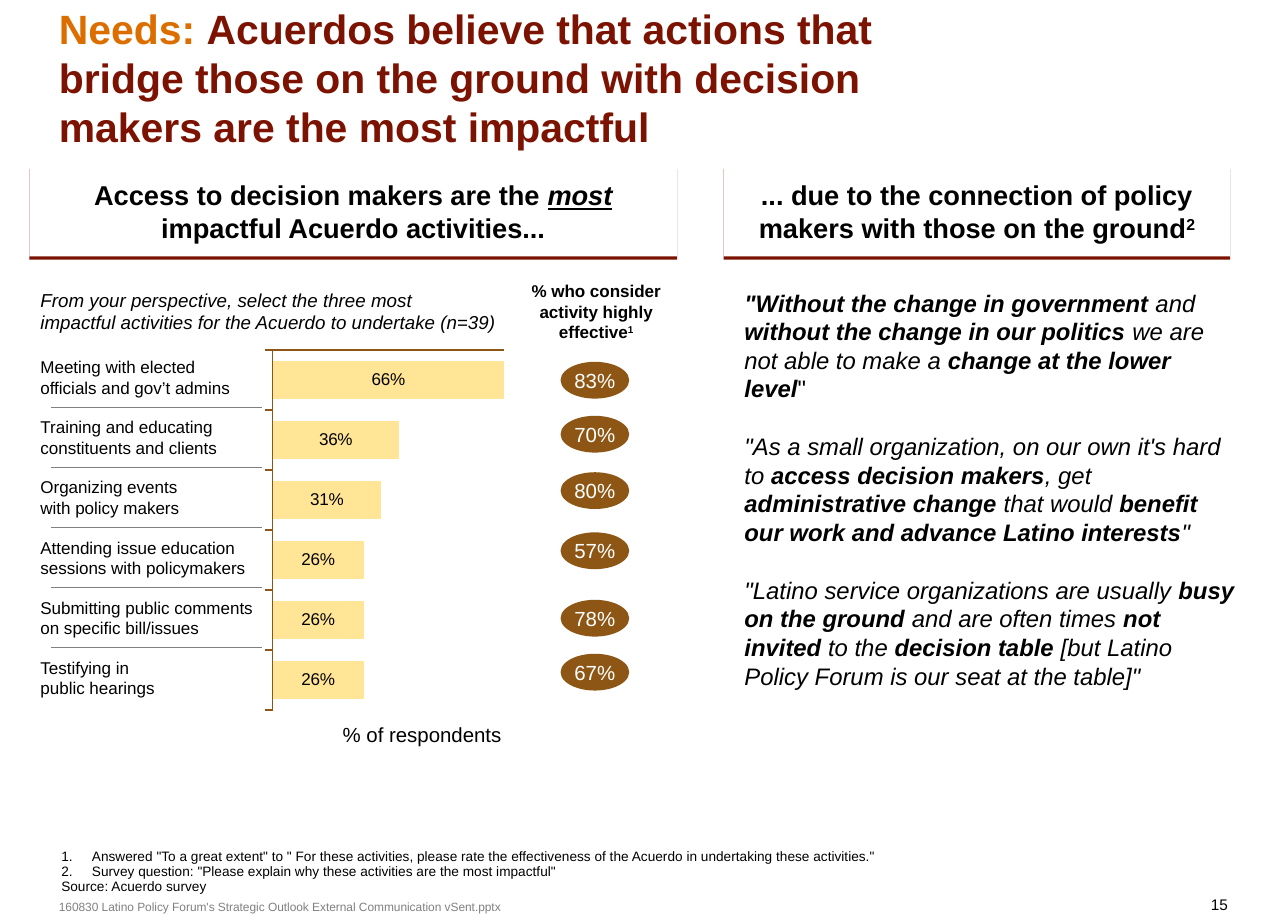
import pptx
import pptx.chart.data
import pptx.dml.color
import pptx.enum.chart
import pptx.enum.shapes
import pptx.enum.text
import pptx.oxml
import pptx.oxml.ns
import pptx.util
from dataclasses import dataclass
from lxml import etree

Inches = pptx.util.Inches
Align = pptx.enum.text.PP_ALIGN
Anchor = pptx.enum.text.MSO_ANCHOR
Shape = pptx.enum.shapes.MSO_SHAPE


@dataclass(frozen=True)
class Theme:
    font: str = "Arial"
    text: str = "000000"
    white: str = "FFFFFF"
    accent: str = "DC6E00"
    dark: str = "7C1302"
    brown: str = "8D5614"
    bar: str = "FFE595"
    grey: str = "808080"
    title: float = 24
    heading: float = 16
    quote: float = 14
    body: float = 12
    question: float = 11
    label: float = 10
    number: float = 9
    note: float = 8
    footer: float = 7


THEME = Theme()

TITLE = [
    ("Needs: ", "accent"),
    ("Acuerdos believe that actions that bridge those on the ground "
     "with decision makers are the most impactful", ""),
]
HEADINGS = [
    (0.24, 5.28, [("Access to decision makers are the ", ""), ("most", "italic underline"),
                  (" impactful Acuerdo activities...", "")]),
    (5.9, 4.13, [("... due to the connection of policy makers with those on the ground", ""),
                 ("2", "super")]),
]
QUESTION = [
    [("From your perspective, select the three most", "")],
    [("impactful activities for the Acuerdo to undertake (n=39)", "")],
]
EFFECTIVE = [("% who consider activity highly effective", ""), ("1", "super")]
ACTIVITIES = [
    ("Meeting with elected\vofficials and gov’t admins", 66, "83%", 2.95),
    ("Training and educating\vconstituents and clients", 36, "70%", 3.39),
    ("Organizing events\vwith policy makers", 31, "80%", 3.85),
    ("Attending issue education\vsessions with policymakers", 26, "57%", 4.34),
    ("Submitting public comments\von specific bill/issues", 26, "78%", 4.89),
    ("Testifying in\vpublic hearings", 26, "67%", 5.33),
]
QUOTES = [
    [('"Without the change in government', "bold"), (" and ", ""),
     ("without the change in our politics", "bold"), (" we are not able to make a ", ""),
     ("change at the lower level", "bold"), ('"', "upright")],
    [('"As a small organization, on our own it\'s hard to ', ""),
     ("access decision makers", "bold"), (", get ", ""),
     ("administrative change ", "bold"), ("that would", ""),
     (" benefit our work and advance Latino interests", "bold"), ('"', "")],
    [('"Latino service organizations are usually ', ""), ("busy on the ground", "bold"),
     (" and are often times ", ""), ("not invited", "bold"), (" to the ", ""),
     ("decision table", "bold"),
     (' [but Latino Policy Forum is our seat at the table]"', "")],
]
NOTES = [
    [('Answered "To a great extent" to " For these activities, please rate the '
      'effectiveness of the Acuerdo in undertaking these activities."', "")],
    [('Survey question: "Please explain why these activities are the most impactful"', "")],
    [("Source: Acuerdo survey", "")],
]
FOOTER = "160830 Latino Policy Forum's Strategic Outlook External Communication vSent.pptx"
PAGE_NUMBER = "15"
AXIS_TITLE = "% of respondents"
ROW_TOP, ROW_STEP, RULE_TOP = 2.91, 0.49, 3.32


def rgb(value):
    return pptx.dml.color.RGBColor.from_string(value)


def style_font(font, size, color=THEME.text, bold=False, italic=False):
    font.name, font.size = THEME.font, pptx.util.Pt(size)
    font.bold, font.italic = bold, italic
    font.color.rgb = rgb(color)


def write(box, paragraphs, size, align=Align.LEFT, anchor=Anchor.TOP, margins=(0, 0),
          gap=0, numbered=0, spacing=None, **look):
    frame = box.text_frame
    frame.word_wrap = True
    frame.auto_size = pptx.enum.text.MSO_AUTO_SIZE.NONE
    frame.vertical_anchor = anchor
    frame.margin_left = frame.margin_right = Inches(margins[0])
    frame.margin_top = frame.margin_bottom = Inches(margins[1])
    for index, spans in enumerate(paragraphs):
        para = frame.add_paragraph() if index else frame.paragraphs[0]
        para.alignment = align
        para.space_before = pptx.util.Pt(gap if index else 0)
        para.line_spacing = spacing
        if index < numbered:
            properties = para._p.get_or_add_pPr()
            properties.set("marL", str(Inches(0.25)))
            properties.set("indent", str(-Inches(0.25)))
            bullet = etree.SubElement(properties, pptx.oxml.ns.qn("a:buAutoNum"))
            bullet.set("type", "arabicPeriod")
        style_font(para.font, size, **look)
        for text, marks in spans:
            if "\v" in text:
                para.text = text
                continue
            span = para.add_run()
            span.text = text
            if "bold" in marks:
                span.font.bold = True
            if "italic" in marks:
                span.font.italic = True
            if "upright" in marks:
                span.font.italic = False
            if "underline" in marks:
                span.font.underline = True
            if "accent" in marks:
                span.font.color.rgb = rgb(THEME.accent)
            if "super" in marks:
                span.font._element.set("baseline", "30000")


def add_text(page, place, paragraphs, size, **options):
    box = page.shapes.add_textbox(*map(Inches, place))
    write(box, paragraphs, size, **options)


def add_filled(page, kind, place, color):
    box = page.shapes.add_shape(kind, *map(Inches, place))
    box.shadow.inherit = False
    box.fill.solid()
    box.fill.fore_color.rgb = rgb(color)
    box.line.fill.background()
    return box


def add_heading(page, left, width, spans):
    box = add_filled(page, Shape.RECTANGLE, (left, 1.35, width, 0.74), THEME.white)
    effects = box._element.spPr.find(pptx.oxml.ns.qn("a:effectLst"))
    shadow = etree.SubElement(effects, pptx.oxml.ns.qn("a:outerShdw"),
                              dist=str(pptx.util.Pt(2)), dir="5400000",
                              algn="t", rotWithShape="0")
    etree.SubElement(shadow, pptx.oxml.ns.qn("a:srgbClr"), val=THEME.dark)
    write(box, [spans], THEME.heading, align=Align.CENTER, anchor=Anchor.BOTTOM,
          margins=(0.1, 0.1), bold=True)


def add_rule(page, top):
    rule = page.shapes.add_connector(pptx.enum.shapes.MSO_CONNECTOR.STRAIGHT,
                                     *map(Inches, (0.42, top, 2.14, top)))
    rule.line.color.rgb = rgb(THEME.grey)
    rule.line.width = pptx.util.Pt(0.75)
    etree.SubElement(rule._element.spPr, pptx.oxml.ns.qn("a:effectLst"))


def add_bars(page):
    enums = pptx.enum.chart
    data = pptx.chart.data.CategoryChartData(number_format='0"%"')
    data.categories = [str(row + 1) for row in range(len(ACTIVITIES))]
    values = [activity[1] for activity in ACTIVITIES]
    data.add_series("Series 1", values)
    chart = page.shapes.add_chart(enums.XL_CHART_TYPE.BAR_CLUSTERED,
                                  *map(Inches, (2.1, 2.76, 2.03, 3.06)), data).chart
    chart.has_legend = chart.has_title = False
    style_font(chart.font, THEME.label)
    for axis in (chart.category_axis, chart.value_axis):
        axis.tick_label_position = enums.XL_TICK_LABEL_POSITION.NONE
        axis.major_tick_mark = axis.minor_tick_mark = enums.XL_TICK_MARK.NONE
        axis.has_major_gridlines = False
        axis.format.line.color.rgb = rgb(THEME.brown)
        axis.format.line.width = pptx.util.Pt(1)
    chart.category_axis.major_tick_mark = enums.XL_TICK_MARK.OUTSIDE
    chart.category_axis.reverse_order = True
    chart.category_axis.crosses = enums.XL_AXIS_CROSSES.MAXIMUM
    chart.value_axis.minimum_scale, chart.value_axis.maximum_scale = 0, max(values)
    plot = chart.plots[0]
    plot.gap_width, plot.vary_by_categories = 60, False
    bars = plot.series[0]
    bars.format.fill.solid()
    bars.format.fill.fore_color.rgb = rgb(THEME.bar)
    labels = bars.data_labels
    labels.show_value = True
    labels.position = enums.XL_LABEL_POSITION.CENTER
    style_font(labels.font, THEME.label)
    area = chart._chartSpace.chart.plotArea
    for old in area.findall(pptx.oxml.ns.qn("c:layout")):
        area.remove(old)
    layout = etree.Element(pptx.oxml.ns.qn("c:layout"))
    manual = etree.SubElement(layout, pptx.oxml.ns.qn("c:manualLayout"))
    for tag, value in (("layoutTarget", "inner"), ("xMode", "edge"), ("yMode", "edge"),
                       ("x", "0.06"), ("y", "0.03"), ("w", "0.93"), ("h", "0.96")):
        etree.SubElement(manual, pptx.oxml.ns.qn("c:" + tag), val=value)
    area.insert(0, layout)


def main():
    deck = pptx.Presentation()
    deck.slide_width, deck.slide_height = Inches(10.5), Inches(7.5)
    page = deck.slides.add_slide(deck.slide_layouts[5])
    title = page.shapes.title
    title.left, title.top, title.width, title.height = map(Inches, (0.48, 0.37, 7.66, 0.91))
    write(title, [TITLE], THEME.title, anchor=Anchor.BOTTOM, margins=(0, 0.05),
          color=THEME.dark, bold=True)
    for left, width, spans in HEADINGS:
        add_heading(page, left, width, spans)
    add_text(page, (0.33, 2.35, 3.9, 0.37), QUESTION, THEME.question,
             anchor=Anchor.BOTTOM, italic=True)
    add_text(page, (4.18, 2.19, 1.36, 0.7), [EFFECTIVE], THEME.label,
             align=Align.CENTER, margins=(0.1, 0.1), bold=True)
    add_bars(page)
    for row, (label, _, share, pill_top) in enumerate(ACTIVITIES):
        add_text(page, (0.33, ROW_TOP + row * ROW_STEP, 1.8, 0.33), [[(label, "")]],
                 THEME.label, anchor=Anchor.MIDDLE)
        pill = add_filled(page, Shape.OVAL, (4.57, pill_top, 0.56, 0.3), THEME.brown)
        write(pill, [[(share, "")]], THEME.body, align=Align.CENTER,
              anchor=Anchor.MIDDLE, color=THEME.white)
    for row in range(len(ACTIVITIES) - 1):
        add_rule(page, RULE_TOP + row * ROW_STEP)
    add_text(page, (2.3, 5.89, 1.79, 0.2), [[(AXIS_TITLE, "")]], THEME.body,
             align=Align.RIGHT)
    add_text(page, (5.97, 2.25, 4.19, 3.5), QUOTES, THEME.quote, margins=(0.1, 0.1),
             gap=17, italic=True)
    add_text(page, (0.5, 6.93, 9.5, 0.36), NOTES, THEME.note, anchor=Anchor.BOTTOM,
             numbered=2, spacing=0.9)
    add_text(page, (0.48, 7.33, 6, 0.12), [[(FOOTER, "")]], THEME.footer,
             anchor=Anchor.MIDDLE, color=THEME.grey)
    add_text(page, (9.51, 7.3, 0.5, 0.14), [[(PAGE_NUMBER, "")]], THEME.number,
             align=Align.RIGHT)
    deck.save("out.pptx")


if __name__ == "__main__":
    main()
